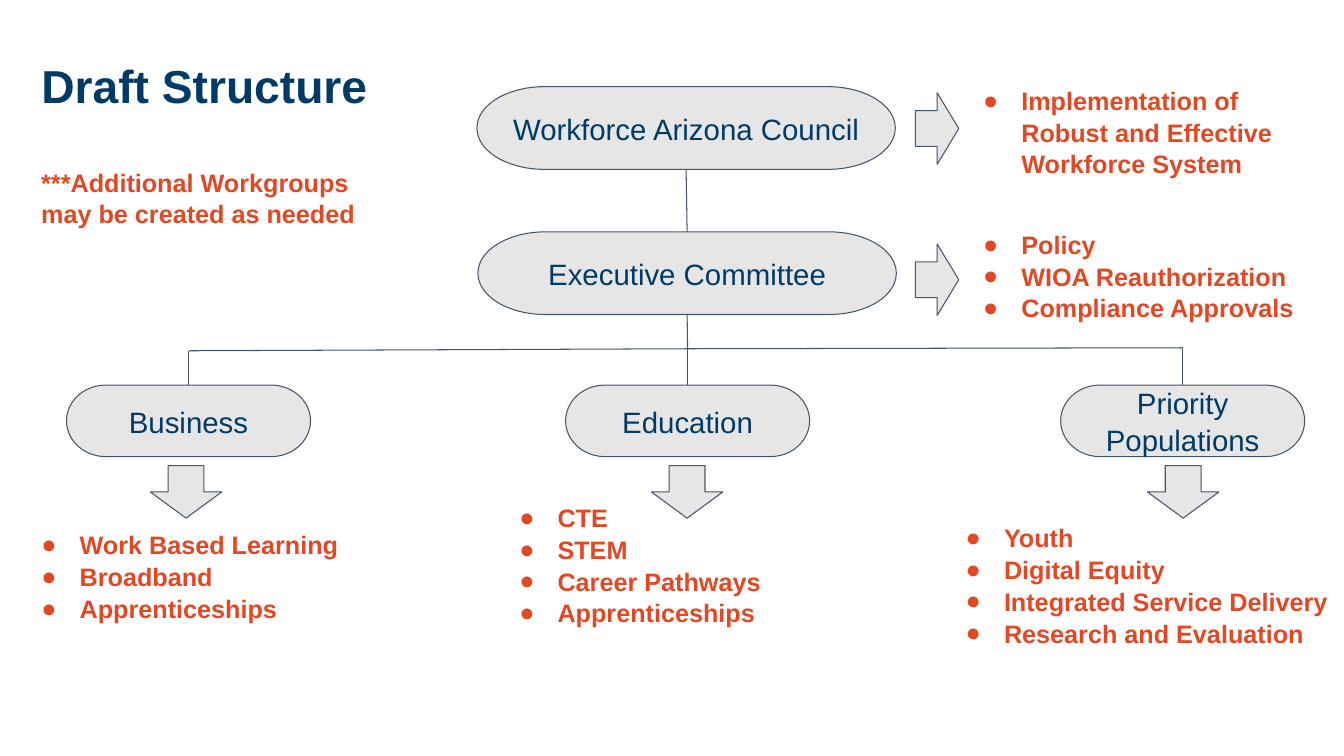
from dataclasses import dataclass

from lxml import etree
from pptx import Presentation
from pptx.dml.color import RGBColor
from pptx.enum.shapes import MSO_CONNECTOR, MSO_SHAPE
from pptx.enum.text import MSO_ANCHOR, MSO_AUTO_SIZE, PP_ALIGN
from pptx.oxml.ns import qn
from pptx.util import Inches, Pt

STRAIGHT = MSO_CONNECTOR.STRAIGHT
PILL = MSO_SHAPE.FLOWCHART_TERMINATOR
RIGHT_ARROW, DOWN_ARROW = MSO_SHAPE.RIGHT_ARROW, MSO_SHAPE.DOWN_ARROW
TOP, MIDDLE = MSO_ANCHOR.TOP, MSO_ANCHOR.MIDDLE
LEFT, CENTER = PP_ALIGN.LEFT, PP_ALIGN.CENTER
NO_AUTOFIT = MSO_AUTO_SIZE.NONE
TOP_SIDE, BOTTOM_SIDE = 0, 2


@dataclass(frozen=True)
class Theme:
    font: str = "Arial"
    navy: RGBColor = RGBColor(0x00, 0x3B, 0x67)
    orange: RGBColor = RGBColor(0xE2, 0x48, 0x24)
    grey: RGBColor = RGBColor(0xE7, 0xE6, 0xE6)
    outline: RGBColor = RGBColor(0x44, 0x54, 0x6A)
    title_size: int = 33
    label_size: int = 21
    list_size: int = 18
    line_width: float = 0.75


THEME = Theme()


def write(box, lines, size, color, bold=True, align=LEFT, anchor=TOP, bullets=False):
    """Fill a box with one formatted paragraph per line."""
    frame = box.text_frame
    frame.word_wrap = True
    frame.auto_size = NO_AUTOFIT
    frame.vertical_anchor = anchor
    frame.margin_left = frame.margin_right = Inches(0.1)
    frame.margin_top = frame.margin_bottom = Inches(0.1)
    for index, line in enumerate(lines):
        para = frame.add_paragraph() if index else frame.paragraphs[0]
        para.alignment = align
        para.line_spacing = 1.05
        para.space_before = Pt(0)
        props = para._p.get_or_add_pPr()
        props.set("marL", str(Inches(0.5 if bullets else 0)))
        props.set("indent", str(Inches(-0.38 if bullets else 0)))
        if bullets:
            bullet_color = etree.SubElement(props, qn("a:buClr"))
            etree.SubElement(bullet_color, qn("a:srgbClr"), val=str(color))
            etree.SubElement(props, qn("a:buFont"), typeface=THEME.font)
            etree.SubElement(props, qn("a:buChar"), char="●")
        else:
            etree.SubElement(props, qn("a:buNone"))
        span = para.add_run()
        span.text = line
        span.font.name = THEME.font
        span.font.size = Pt(size)
        span.font.bold = bold
        span.font.color.rgb = color


def add_block(kind, left, top, width, height):
    """Add a grey outlined preset shape."""
    block = page.shapes.add_shape(
        kind, Inches(left), Inches(top), Inches(width), Inches(height))
    block.shadow.inherit = False
    block.fill.solid()
    block.fill.fore_color.rgb = THEME.grey
    block.line.color.rgb = THEME.outline
    block.line.width = Pt(THEME.line_width)
    return block


deck = Presentation()
deck.slide_width, deck.slide_height = Inches(13.33), Inches(7.5)
page = deck.slides.add_slide(deck.slide_layouts.get_by_name("Comparison"))

# Heading and note
title = page.shapes.title
title.left, title.top = Inches(0.31), Inches(0.44)
title.width, title.height = Inches(3.79), Inches(0.8)
write(title, ["Draft Structure"], THEME.title_size, THEME.navy)
note = page.shapes.add_textbox(Inches(0.31), Inches(1.54), Inches(3.79), Inches(0.82))
write(note, ["***Additional Workgroups may be created as needed"],
      THEME.list_size, THEME.orange)

# Organisation boxes
bodies = [
    ("Workforce Arizona Council", 4.73, 0.86, 4.15, 0.82),
    ("Executive Committee", 4.74, 2.3, 4.15, 0.82),
    ("Business", 0.66, 3.82, 2.42, 0.71),
    ("Education", 5.61, 3.82, 2.42, 0.71),
    ("Priority Populations", 10.52, 3.82, 2.42, 0.71),
]
pills = []
for name, *place in bodies:
    pill = add_block(PILL, *place)
    write(pill, [name], THEME.label_size, THEME.navy,
          bold=False, align=CENTER, anchor=MIDDLE)
    pills.append(pill)
council, committee, business, education, priority = pills

# Connecting lines: (start box, start point, end box, end point)
hub = (6.82, 3.46)
business_turn, priority_turn = (1.87, 3.48), (11.73, 3.45)
links = [
    (council, None, committee, None),
    (committee, None, None, hub),
    (None, business_turn, None, hub),
    (None, hub, None, priority_turn),
    (None, business_turn, business, None),
    (None, hub, education, None),
    (None, priority_turn, priority, None),
]
for start_box, start, end_box, end in links:
    x1, y1 = start or (0, 0)
    x2, y2 = end or (0, 0)
    link = page.shapes.add_connector(
        STRAIGHT, Inches(x1), Inches(y1), Inches(x2), Inches(y2))
    if start_box:
        link.begin_connect(start_box, BOTTOM_SIDE)
    if end_box:
        link.end_connect(end_box, TOP_SIDE)
    link.line.color.rgb = THEME.outline
    link.line.width = Pt(THEME.line_width)
    etree.SubElement(link._element.spPr, qn("a:effectLst"))

# Arrows from each box to its list
for top in (0.92, 2.42):
    add_block(RIGHT_ARROW, 9.08, top, 0.43, 0.71)
for left in (1.49, 6.46, 11.38):
    add_block(DOWN_ARROW, left, 4.62, 0.71, 0.52)

# Responsibilities of each box
duties = [
    (9.53, 0.73, 3.58, 1.11, ["Implementation of Robust and Effective Workforce System"]),
    (9.53, 2.16, 3.67, 1.11,
     ["Policy", "WIOA Reauthorization", "Compliance Approvals"]),
    (0.19, 5.14, 3.7, 1.11,
     ["Work Based Learning", "Broadband", "Apprenticeships"]),
    (4.93, 4.87, 3.39, 1.41,
     ["CTE", "STEM", "Career Pathways", "Apprenticeships"]),
    (9.36, 5.07, 3.97, 1.41,
     ["Youth", "Digital Equity", "Integrated Service Delivery",
      "Research and Evaluation"]),
]
list_boxes = [holder for holder in page.placeholders if holder.placeholder_format.idx]
list_boxes.append(page.shapes.add_textbox(0, 0, 0, 0))
for box, (left, top, width, height, lines) in zip(list_boxes, duties):
    box.left, box.top = Inches(left), Inches(top)
    box.width, box.height = Inches(width), Inches(height)
    write(box, lines, THEME.list_size, THEME.orange, bullets=True)

deck.save("out.pptx")
